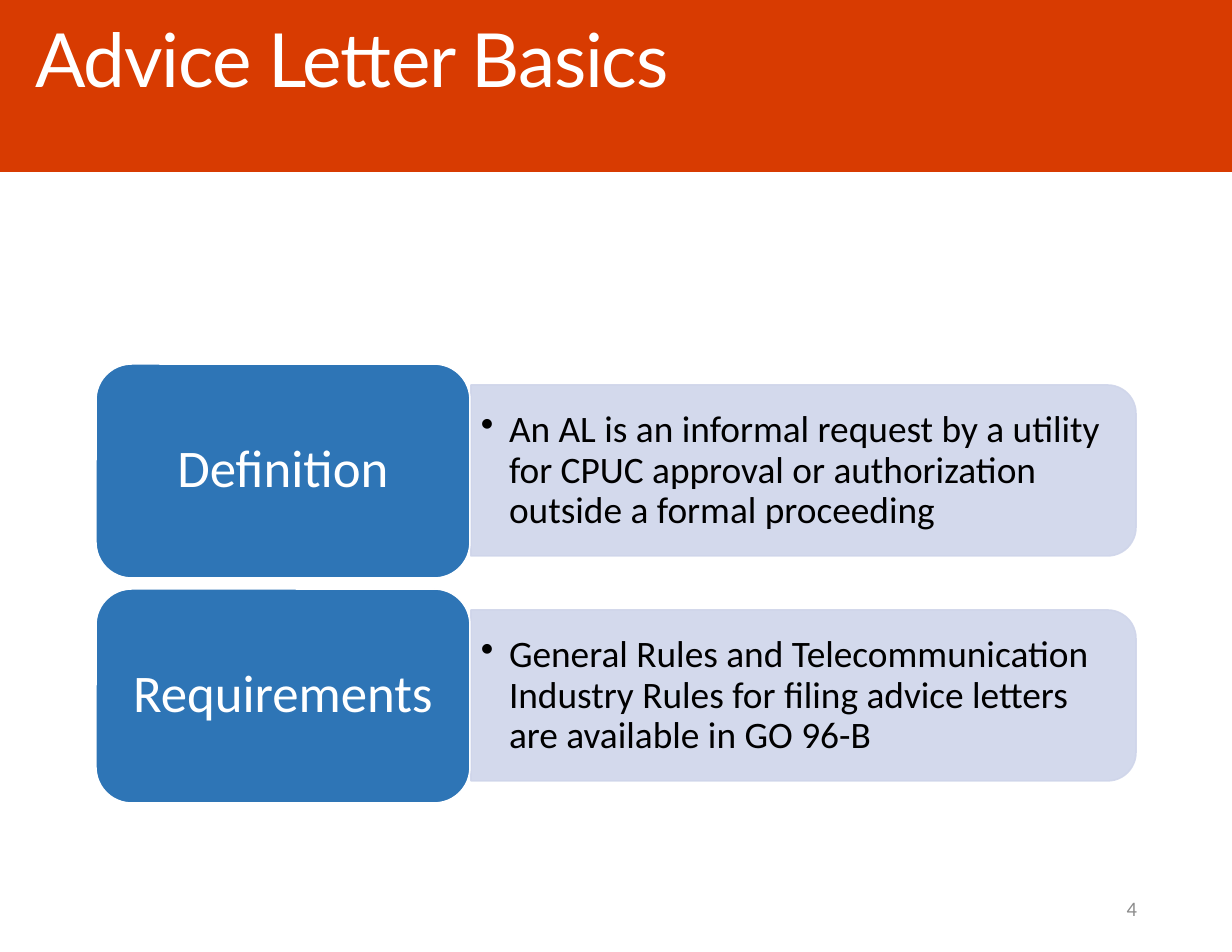
from lxml import etree
from pptx import Presentation
from pptx.dml.color import RGBColor
from pptx.enum.shapes import MSO_SHAPE as Shape
from pptx.enum.text import MSO_ANCHOR as Anchor, PP_ALIGN as Align
from pptx.oxml.ns import qn
from pptx.util import Emu, Pt

PX = 914400 // 112
ORANGE, BLUE, PALE = "D83B01", "2E75B6", "CFD5EA"
WHITE, BLACK, GRAY = "FFFFFF", "000000", "8C8C8C"


def px(value):
    return Emu(value * PX)


def color(code):
    return RGBColor.from_string(code)


class Slide:
    font = "Calibri"
    side_inset, end_inset = 11, 6

    def __init__(self, deck):
        self.page = deck.slides.add_slide(deck.slide_layouts[6])

    def shape(self, kind, left, top, width, height, fill, line=None, rotation=0, opacity=100):
        box = self.page.shapes.add_shape(kind, px(left), px(top), px(width), px(height))
        box.shadow.inherit = False
        box.rotation = rotation
        box.fill.solid()
        box.fill.fore_color.rgb = color(fill)
        if line:
            box.line.color.rgb = color(line)
            box.line.width = Pt(1)
        else:
            box.line.fill.background()
        if opacity < 100:
            for tone in box._element.spPr.iter(qn("a:srgbClr")):
                etree.SubElement(tone, qn("a:alpha"), val=str(opacity * 1000))
        return box

    def text(self, words, left, top, width, height, size, ink, align=Align.LEFT,
             anchor=Anchor.MIDDLE, spacing=0.9, font=None, insets=None):
        box = self.page.shapes.add_textbox(px(left), px(top), px(width), px(height))
        frame = box.text_frame
        frame.word_wrap = True
        frame.vertical_anchor = anchor
        side, end = insets or (self.side_inset, self.end_inset)
        frame.margin_left = frame.margin_right = px(side)
        frame.margin_top = frame.margin_bottom = px(end)
        frame.text = words
        para = frame.paragraphs[0]
        para.alignment = align
        para.line_spacing = spacing
        span = para.runs[0]
        span.font.name = font or self.font
        span.font.size = Pt(size)
        span.font.color.rgb = color(ink)
        return para

    def bullet(self, words, *place, **style):
        para = self.text(words, *place, **style)
        para.level = 1
        props = para._p.get_or_add_pPr()
        props.set("marL", str(px(28)))
        props.set("indent", str(px(-28)))
        etree.SubElement(props, qn("a:buChar"), char="•")


def main():
    deck = Presentation()
    deck.slide_width, deck.slide_height = px(1232), px(952)
    slide = Slide(deck)

    # Label and explanation rows
    rows = [
        ("Definition",
         "An AL is an informal request by a utility for CPUC approval "
         "or authorization outside a formal proceeding"),
        ("Requirements",
         "General Rules and Telecommunication Industry Rules for filing "
         "advice letters are available in GO 96-B"),
    ]
    for index, (label, detail) in enumerate(rows):
        top = 364 + 225 * index
        slide.shape(Shape.ROUND_2_SAME_RECTANGLE, 718, top - 226, 171, 665,
                    PALE, PALE, rotation=90, opacity=90)
        slide.bullet(detail, 470, top + 30, 657, 154, size=24, ink=BLACK)
        slide.shape(Shape.ROUNDED_RECTANGLE, 96, top, 374, 214, BLUE, WHITE)
        slide.text(label, 106, top + 10, 354, 193, 34, WHITE,
                   align=Align.CENTER, insets=(16, 8))

    # Title band
    slide.shape(Shape.RECTANGLE, 0, 0, 1232, 172, ORANGE)
    title = slide.text("Advice Letter Basics", 10, 10, 684, 100, 48, WHITE,
                       align=Align.CENTER, anchor=Anchor.BOTTOM, font="Lato")
    title.runs[0].font._element.set("spc", "-80")

    # Page number
    slide.text("4", 870, 883, 278, 50, 13.2, GRAY, align=Align.RIGHT, spacing=1.0)

    deck.save("out.pptx")


if __name__ == "__main__":
    main()
